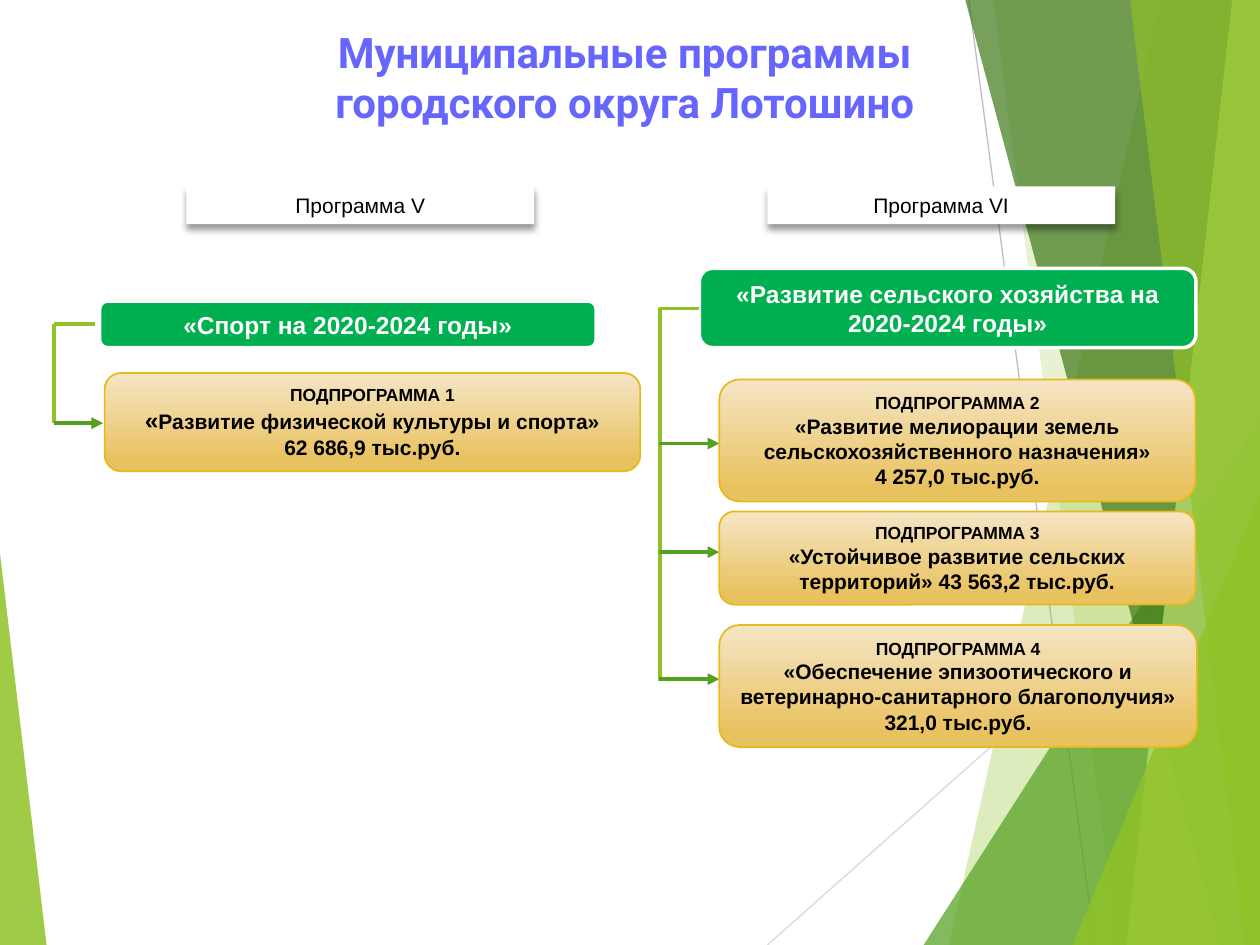
from dataclasses import dataclass

from lxml.etree import SubElement
from pptx import Presentation
from pptx.dml.color import RGBColor
from pptx.enum.shapes import MSO_CONNECTOR as Connector, MSO_SHAPE as Preset
from pptx.enum.text import MSO_ANCHOR as Anchor, PP_ALIGN as Align
from pptx.oxml.ns import qn
from pptx.util import Cm, Pt

WIDTH, HEIGHT = 25.4, 19.05
WHITE = RGBColor(0xFF, 0xFF, 0xFF)
BLACK = RGBColor(0x00, 0x00, 0x00)
VIOLET = RGBColor(0x66, 0x66, 0xFF)
EMERALD = RGBColor(0x00, 0xB0, 0x50)
LIME = RGBColor(0x90, 0xC2, 0x26)
LEAF = RGBColor(0x54, 0xA0, 0x21)
FOREST = RGBColor(0x3F, 0x78, 0x19)
PALE_LIME = RGBColor(0xC0, 0xE4, 0x74)
CREAM = RGBColor(0xF5, 0xE5, 0xC5)
SAND = RGBColor(0xE9, 0xC2, 0x60)
GOLD = RGBColor(0xE6, 0xB9, 0x1E)
GREY = RGBColor(0xBF, 0xBF, 0xBF)
LIGHT_GREY = RGBColor(0xD9, 0xD9, 0xD9)


@dataclass(frozen=True)
class Box:
    left: float
    top: float
    width: float
    height: float


@dataclass(frozen=True)
class Run:
    text: str
    size: float
    color: RGBColor = BLACK
    bold: bool = True
    font: str = "Arial"


@dataclass(frozen=True)
class Band:
    top_left: float
    bottom_left: float
    color: RGBColor
    opacity: int


@dataclass(frozen=True)
class Triangle:
    box: Box
    apex: float
    color: RGBColor
    opacity: int


@dataclass(frozen=True)
class Line:
    start: tuple[float, float]
    end: tuple[float, float]
    color: RGBColor = LIME
    width: float = 2.25
    arrow: bool = False
    kind: Connector = Connector.STRAIGHT


@dataclass(frozen=True)
class Subprogram:
    box: Box
    number: int
    paragraphs: list[list[Run]]


BACKDROP = [
    Band(23.39, 19.13, LIME, 30),
    Band(20.02, 22.53, LIME, 20),
    Triangle(Box(18.62, 8.46, 6.78, 10.59), 1, LEAF, 72),
    Band(19.46, 24.59, FOREST, 70),
    Band(24.84, 22.71, PALE_LIME, 70),
    Band(22.78, 25.1, LIME, 65),
    Triangle(Box(21.62, 9.98, 3.78, 9.07), 1, LIME, 80),
    Triangle(Box(0, 11.15, 0.94, 7.9), 0, LIME, 85),
]
BACKDROP_LINES = [
    Line((19.53, 0), (22.07, HEIGHT), GREY, 0.75),
    Line((WIDTH, 10.24), (15.47, HEIGHT), LIGHT_GREY, 0.75),
]
LABELS = [(3.76, "Программа V"), (15.47, "Программа VI")]
PROGRAMS = [
    (Box(2.01, 6.07, 10.01, 0.94), "«Спорт на 2020-2024 годы»"),
    (Box(14.1, 5.41, 10.01, 1.6), "«Развитие сельского хозяйства на 2020-2024 годы»"),
]
SUBPROGRAMS = [
    Subprogram(Box(2.11, 7.52, 10.8, 1.98), 1, [
        [Run("«", 14), Run("Развитие физической культуры и спорта»\v62 686,9 тыс.руб.", 12)]]),
    Subprogram(Box(14.5, 7.65, 9.6, 2.46), 2, [
        [Run("«Развитие мелиорации земель сельскохозяйственного назначения»\v4 257,0 тыс.руб.", 12)]]),
    Subprogram(Box(14.5, 10.31, 9.6, 1.88), 3, [
        [Run("«Устойчивое развитие сельских территорий» 43 563,2 тыс.руб.", 12)]]),
    Subprogram(Box(14.5, 12.6, 9.63, 2.46), 4, [
        [Run("«Обеспечение эпизоотического и ветеринарно-санитарного благополучия»", 12)],
        [Run("321,0 тыс.руб.", 12)]]),
]
BRACKETS = [
    Line((1.09, 6.53), (1.09, 8.53)),
    Line((1.09, 6.53), (1.91, 6.53)),
    Line((2.08, 8.53), (1.09, 8.53), LEAF, arrow=True),
    Line((14.1, 6.22), (13.31, 13.72), kind=Connector.ELBOW),
    *(Line((14.5, y), (13.28, y), LEAF, arrow=True) for y in (8.94, 11.13, 13.69)),
]


def lengths(box: Box) -> list[Cm]:
    """Return the box as left, top, width and height."""
    return [Cm(value) for value in (box.left, box.top, box.width, box.height)]


def add_preset(slide, preset: Preset, box: Box):
    """Add a preset shape without shadow."""
    shape = slide.shapes.add_shape(preset, *lengths(box))
    shape.shadow.inherit = False
    return shape


def fill_solid(shape, color: RGBColor) -> None:
    """Fill the shape with one colour and hide its outline."""
    shape.fill.solid()
    shape.fill.fore_color.rgb = color
    shape.line.fill.background()


def set_outline(shape, color: RGBColor, width: float) -> None:
    """Give the shape an outline."""
    shape.line.color.rgb = color
    shape.line.width = Pt(width)


def add_facet(slide, facet: Band | Triangle) -> None:
    """Draw one translucent facet of the backdrop."""
    if isinstance(facet, Band):
        builder = slide.shapes.build_freeform(Cm(facet.top_left), 0)
        corners = [(WIDTH, 0), (WIDTH, HEIGHT), (facet.bottom_left, HEIGHT)]
        builder.add_line_segments([(Cm(x), Cm(y)) for x, y in corners])
        shape = builder.convert_to_shape()
        shape.shadow.inherit = False
    else:
        shape = add_preset(slide, Preset.ISOSCELES_TRIANGLE, facet.box)
        shape.adjustments[0] = facet.apex
    fill_solid(shape, facet.color)
    color = shape.fill._xPr.find(qn("a:solidFill"))[0]
    SubElement(color, qn("a:alpha"), val=str(facet.opacity * 1000))


def add_line(slide, line: Line) -> None:
    """Draw a connector, with an arrowhead at its start if asked."""
    points = [Cm(value) for value in (*line.start, *line.end)]
    connector = slide.shapes.add_connector(line.kind, *points)
    set_outline(connector, line.color, line.width)
    properties = connector._element.spPr
    if line.kind == Connector.ELBOW:
        properties.find(qn("a:prstGeom")).set("prst", "bentConnector2")
    if line.arrow:
        SubElement(connector.line._get_or_add_ln(), qn("a:headEnd"), type="triangle")
    SubElement(properties, qn("a:effectLst"))


def write(shape, paragraphs: list[list[Run]], anchor: Anchor = Anchor.MIDDLE) -> None:
    """Write centred paragraphs, turning vertical tabs into line breaks."""
    frame = shape.text_frame
    frame.word_wrap = True
    frame.vertical_anchor = anchor
    for index, runs in enumerate(paragraphs):
        paragraph = frame.add_paragraph() if index else frame.paragraphs[0]
        paragraph.alignment = Align.CENTER
        for item in runs:
            for number, text in enumerate(item.text.split("\v")):
                if number:
                    paragraph.add_line_break()
                run = paragraph.add_run()
                run.text = text
                run.font.name = item.font
                run.font.size = Pt(item.size)
                run.font.bold = item.bold
                run.font.color.rgb = item.color


def add_label(slide, left: float, text: str) -> None:
    """Draw a white label with a soft shadow below."""
    shape = add_preset(slide, Preset.RECTANGLE, Box(left, 3.76, 7.01, 0.76))
    fill_solid(shape, WHITE)
    effects = shape._element.spPr.find(qn("a:effectLst"))
    shadow = SubElement(effects, qn("a:outerShdw"), blurRad=str(Pt(4)), dist=str(Pt(3)),
                        dir="5400000", rotWithShape="0")
    color = SubElement(shadow, qn("a:srgbClr"), val=str(BLACK))
    SubElement(color, qn("a:alpha"), val="40000")
    write(shape, [[Run(text, 12, bold=False)]])


def add_program(slide, box: Box, text: str) -> None:
    """Draw a green program heading."""
    shape = add_preset(slide, Preset.ROUNDED_RECTANGLE, box)
    fill_solid(shape, EMERALD)
    set_outline(shape, WHITE, 2)
    write(shape, [[Run(text, 14, WHITE)]])


def add_subprogram(slide, item: Subprogram) -> None:
    """Draw a golden subprogram card."""
    shape = add_preset(slide, Preset.ROUNDED_RECTANGLE, item.box)
    shape.fill.gradient()
    shape.fill.gradient_angle = 270
    for stop, position, color in zip(shape.fill.gradient_stops, (0, 0.88), (CREAM, SAND)):
        stop.position = position
        stop.color.rgb = color
    set_outline(shape, GOLD, 1)
    write(shape, [[Run(f"ПОДПРОГРАММА {item.number}", 10)], *item.paragraphs])


def main() -> None:
    """Build the slide and save it."""
    presentation = Presentation()
    presentation.slide_width, presentation.slide_height = Cm(WIDTH), Cm(HEIGHT)
    slide = presentation.slides.add_slide(presentation.slide_layouts[6])
    for line in BACKDROP_LINES:
        add_line(slide, line)
    for facet in BACKDROP:
        add_facet(slide, facet)
    title = slide.shapes.add_textbox(*lengths(Box(1.19, 0.41, 22.81, 2.18)))
    heading = "Муниципальные программы\vгородского округа Лотошино"
    write(title, [[Run(heading, 24, VIOLET, font="Roboto")]], Anchor.TOP)
    for left, text in LABELS:
        add_label(slide, left, text)
    for box, text in PROGRAMS:
        add_program(slide, box, text)
    for line in BRACKETS:
        add_line(slide, line)
    for item in SUBPROGRAMS:
        add_subprogram(slide, item)
    presentation.save("out.pptx")


if __name__ == "__main__":
    main()
